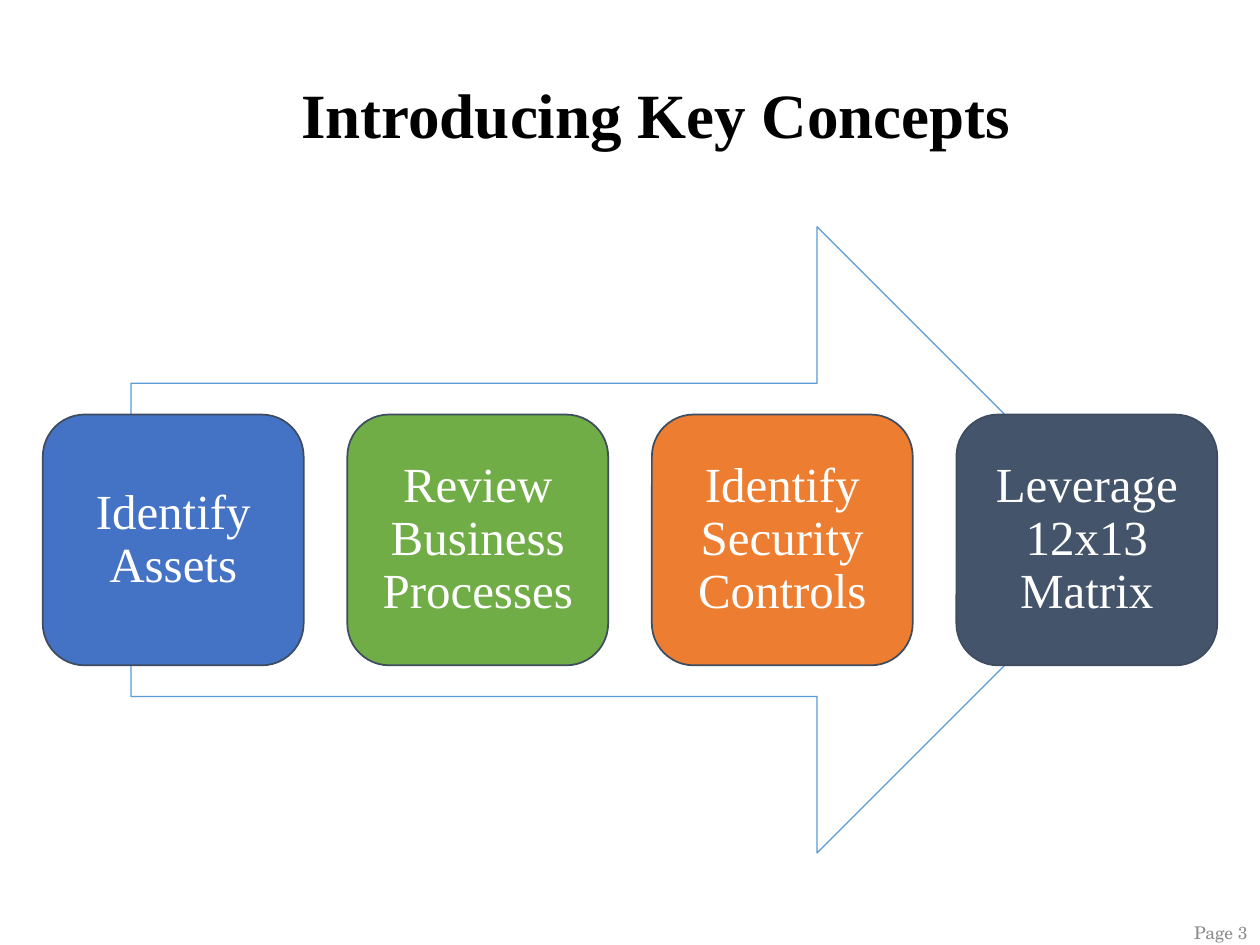
from pptx import Presentation
from pptx.dml.color import RGBColor
from pptx.enum.shapes import MSO_SHAPE
from pptx.enum.text import MSO_ANCHOR, PP_ALIGN
from pptx.util import Inches, Pt

# Content
TITLE = "Introducing Key Concepts"
PAGE_LABEL = "Page 3"
STEPS = [
    ("Identify Assets", "blue"),
    ("Review Business Processes", "green"),
    ("Identify Security Controls", "orange"),
    ("Leverage 12x13 Matrix", "slate"),
]
COLORS = {
    "blue": "4472C4", "green": "70AD47", "orange": "ED7D31", "slate": "44546A",
    "arrow": "5B9BD5", "outline": "3E4C60",
    "black": "000000", "white": "FFFFFF", "gray": "8C8C8C",
}
SERIF = "Times New Roman"

# Step row
STEP_LEFT, STEP_TOP = 0.34, 3.29
STEP_WIDTH, STEP_HEIGHT = 2.07, 1.99
STEP_PITCH = 2.417
STEP_INSET = 0.12


def color(name):
    return RGBColor.from_string(COLORS[name])


def write(box, text, size, color_name, align, anchor, font=SERIF, bold=False, spacing=0.9):
    frame = box.text_frame
    frame.word_wrap = True
    frame.vertical_anchor = anchor
    para = frame.paragraphs[0]
    para.alignment = align
    para.line_spacing = spacing
    para.space_before = Pt(0)
    span = para.add_run()
    span.text = text
    span.font.name = font
    span.font.size = Pt(size)
    span.font.bold = bold
    span.font.color.rgb = color(color_name)


def add_outlined(page, kind, place, line_name, line_width):
    shape = page.shapes.add_shape(kind, *map(Inches, place))
    shape.shadow.inherit = False
    shape.line.color.rgb = color(line_name)
    shape.line.width = Pt(line_width)
    return shape


def main():
    deck = Presentation()
    deck.slide_width, deck.slide_height = Inches(10), Inches(7.5)
    page = deck.slides.add_slide(deck.slide_layouts[5])

    # Title
    title = page.shapes.title
    title.left, title.top = Inches(1.1), Inches(0.62)
    title.width, title.height = Inches(8.21), Inches(0.67)
    write(title, TITLE, 36, "black", PP_ALIGN.CENTER, MSO_ANCHOR.TOP, bold=True)

    # Page label
    label = page.shapes.add_textbox(Inches(7.75), Inches(7.2), Inches(2.25), Inches(0.4))
    write(label, PAGE_LABEL, 10, "gray", PP_ALIGN.RIGHT, MSO_ANCHOR.MIDDLE,
          font="TeX Gyre Schola", spacing=1.0)

    # Arrow behind the steps
    arrow = add_outlined(page, MSO_SHAPE.RIGHT_ARROW, (1.04, 1.8, 7.93, 4.97), "arrow", 0.75)
    arrow.fill.background()

    # Steps
    for index, (text, fill_name) in enumerate(STEPS):
        place = (STEP_LEFT + index * STEP_PITCH, STEP_TOP, STEP_WIDTH, STEP_HEIGHT)
        step = add_outlined(page, MSO_SHAPE.ROUNDED_RECTANGLE, place, "outline", 1)
        step.fill.solid()
        step.fill.fore_color.rgb = color(fill_name)
        frame = step.text_frame
        frame.margin_left = frame.margin_right = Inches(STEP_INSET)
        frame.margin_top = frame.margin_bottom = Inches(STEP_INSET)
        write(step, text, 28, "white", PP_ALIGN.CENTER, MSO_ANCHOR.MIDDLE)

    deck.save("out.pptx")


if __name__ == "__main__":
    main()
